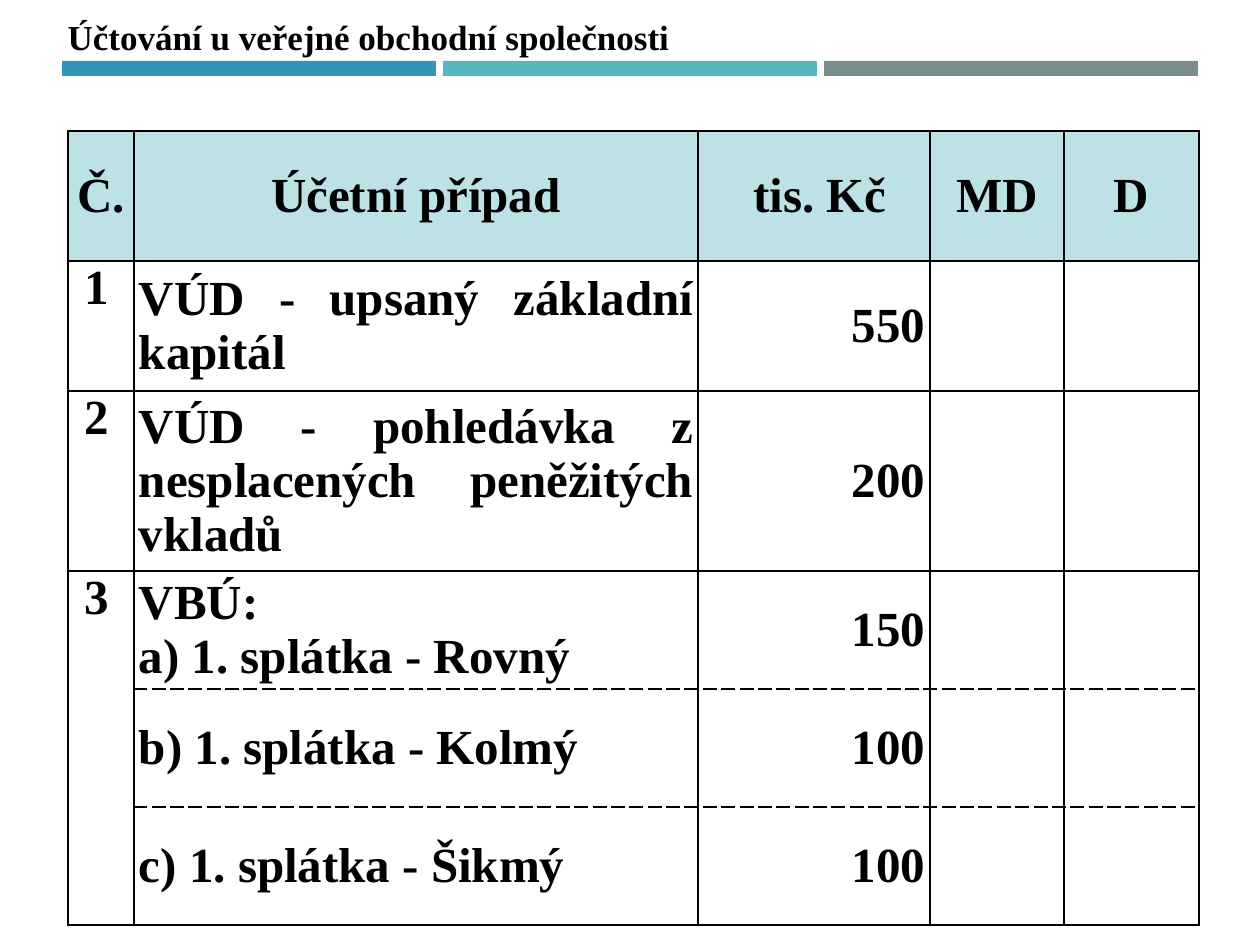
from lxml import etree
from pptx import Presentation
from pptx import util as u
from pptx.dml.color import RGBColor
from pptx.enum import shapes, text
from pptx.oxml import ns

EMU_PER_PX = 914400 / 126
FONT = "Times New Roman"
BLACK = RGBColor(0x00, 0x00, 0x00)
HEADER_FILL = RGBColor(0xBC, 0xE2, 0xE6)
BAR_COLOURS = [
    RGBColor(0x34, 0x94, 0xBA),
    RGBColor(0x58, 0xB6, 0xC0),
    RGBColor(0x7A, 0x8C, 0x8E),
]
COLUMN_WIDTHS = [66, 564, 232, 134, 135]
ROW_HEIGHTS = [130, 130, 180, 118, 118, 118]
FIRST_INSTALMENT_ROW = 3
LAST_ROW = len(ROW_HEIGHTS) - 1
CELL_MARGIN = 5
NUMBER_MARGIN = 17
ENTRIES = [
    ["Č.", "Účetní případ", " tis. Kč", "MD", "D"],
    ["1", "VÚD - upsaný základní kapitál", "550", "", ""],
    ["2", "VÚD - pohledávka z nesplacených peněžitých vkladů", "200", "", ""],
    ["3", "VBÚ:\na) 1. splátka - Rovný", "150", "", ""],
    ["", "b) 1. splátka - Kolmý", "100", "", ""],
    ["", "c) 1. splátka - Šikmý", "100", "", ""],
]
COLUMN_ALIGNMENTS = [
    text.PP_ALIGN.LEFT,
    text.PP_ALIGN.JUSTIFY,
    text.PP_ALIGN.RIGHT,
    text.PP_ALIGN.CENTER,
    text.PP_ALIGN.CENTER,
]


def px(length):
    """Turn px into EMU."""
    return u.Emu(round(length * EMU_PER_PX))


def add_text(paragraph, wording, size, alignment):
    """Add one bold run to an aligned paragraph."""
    paragraph.alignment = alignment
    run = paragraph.add_run()
    run.text = wording
    run.font.name = FONT
    run.font.size = u.Pt(size)
    run.font.bold = True
    run.font.color.rgb = BLACK


def place_title(slide, wording):
    """Move the title placeholder to the top and fill it."""
    title = slide.shapes.title
    title.left, title.top, title.width, title.height = map(px, (55, 9, 631, 55))
    frame = title.text_frame
    frame.word_wrap = False
    frame.auto_size = text.MSO_AUTO_SIZE.NONE
    frame.vertical_anchor = text.MSO_ANCHOR.TOP
    add_text(frame.paragraphs[0], wording, 20, text.PP_ALIGN.LEFT)


def add_bars(slide):
    """Draw the row of coloured bars under the title."""
    for index, colour in enumerate(BAR_COLOURS):
        bar = slide.shapes.add_shape(
            shapes.MSO_SHAPE.RECTANGLE, px(62 + index * 381), px(61), px(374), px(15)
        )
        bar.shadow.inherit = False
        bar.fill.solid()
        bar.fill.fore_color.rgb = colour
        bar.line.fill.background()


def set_borders(cell, dashed_sides):
    """Give a cell black borders, dashed on the named sides."""
    properties = cell._tc.get_or_add_tcPr()
    for side in "LRTB":
        border = etree.SubElement(properties, ns.qn(f"a:ln{side}"), w=str(u.Pt(1)))
        fill = etree.SubElement(border, ns.qn("a:solidFill"))
        etree.SubElement(fill, ns.qn("a:srgbClr"), val=str(BLACK))
        dash = "dash" if side in dashed_sides else "solid"
        etree.SubElement(border, ns.qn("a:prstDash"), val=dash)


def instalment_dashes(row, column):
    """Name the sides that separate one instalment from the next."""
    if column == 0 or row < FIRST_INSTALMENT_ROW:
        return ""
    above = "T" if row > FIRST_INSTALMENT_ROW else ""
    below = "B" if row < LAST_ROW else ""
    return above + below


def fill_cell(cell, wording, row, column):
    """Format one ledger cell and write its paragraphs."""
    is_header = row == 0
    is_number = column == 0 and not is_header
    cell.margin_left = px(NUMBER_MARGIN if is_number else CELL_MARGIN)
    cell.margin_right = px(CELL_MARGIN)
    cell.margin_top = cell.margin_bottom = 0
    cell.vertical_anchor = text.MSO_ANCHOR.TOP if is_number else text.MSO_ANCHOR.MIDDLE
    set_borders(cell, instalment_dashes(row, column))
    if is_header:
        cell.fill.solid()
        cell.fill.fore_color.rgb = HEADER_FILL
    else:
        cell.fill.background()
    if not wording:
        return
    alignment = text.PP_ALIGN.CENTER if is_header else COLUMN_ALIGNMENTS[column]
    frame = cell.text_frame
    for index, line in enumerate(wording.split("\n")):
        paragraph = frame.add_paragraph() if index else frame.paragraphs[0]
        add_text(paragraph, line, 28, alignment)


def add_ledger(slide):
    """Build the table of accounting entries."""
    ledger = slide.shapes.add_table(
        len(ROW_HEIGHTS), len(COLUMN_WIDTHS), px(68), px(131),
        px(sum(COLUMN_WIDTHS)), px(sum(ROW_HEIGHTS)),
    ).table
    ledger.first_row = False
    ledger.horz_banding = False
    for column, width in zip(ledger.columns, COLUMN_WIDTHS):
        column.width = px(width)
    for row, height in zip(ledger.rows, ROW_HEIGHTS):
        row.height = px(height)
    for row, entry in enumerate(ENTRIES):
        for column, wording in enumerate(entry):
            fill_cell(ledger.cell(row, column), wording, row, column)
    ledger.cell(FIRST_INSTALMENT_ROW, 0).merge(ledger.cell(LAST_ROW, 0))


def main():
    """Build and save the slide."""
    deck = Presentation()
    deck.slide_width, deck.slide_height = px(1260), px(945)
    slide = deck.slides.add_slide(deck.slide_layouts.get_by_name("Title Only"))
    add_bars(slide)
    place_title(slide, "Účtování u veřejné obchodní společnosti")
    add_ledger(slide)
    deck.save("out.pptx")


if __name__ == "__main__":
    main()
